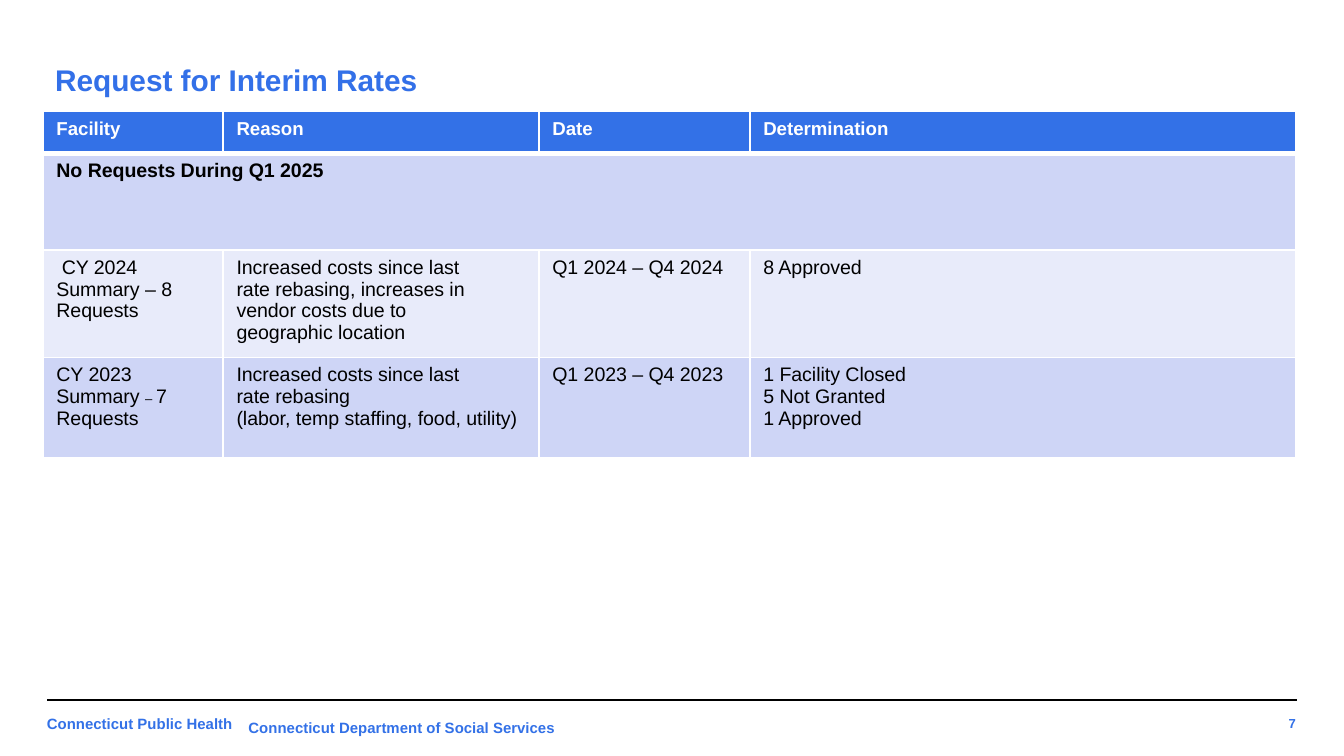
from lxml import etree
from pptx import Presentation
from pptx import util as u
from pptx.dml.color import RGBColor
from pptx.enum import shapes, text
from pptx.oxml.ns import qn

BLUE, WHITE, BLACK = "3371E7", "FFFFFF", "000000"
DARK_BAND, LIGHT_BAND = "CED5F6", "E8EBFA"
NBSP = chr(160)


def rgb(value):
    return RGBColor.from_string(value)


def style(r, size, color, bold=False):
    r.font.name = "Arial"
    r.font.size = u.Pt(size)
    r.font.bold = bold
    r.font.color.rgb = rgb(color)


def place(sp, box):
    sp.left, sp.top, sp.width, sp.height = [u.Inches(v) for v in box]


def inset(tf, x, y):
    tf.margin_left = tf.margin_right = u.Inches(x)
    tf.margin_top = tf.margin_bottom = u.Inches(y)


def add_title(s, box, words):
    sp = s.shapes.title
    place(sp, box)
    tf = sp.text_frame
    tf.text = words
    tf.vertical_anchor = text.MSO_ANCHOR.MIDDLE
    inset(tf, 0.1, 0.1)
    p = tf.paragraphs[0]
    p.alignment = text.PP_ALIGN.LEFT
    style(p.runs[0], 16, "3370E8", True)


def add_label(s, box, words, size=8, pad=0.1, align=text.PP_ALIGN.LEFT,
              anchor=text.MSO_ANCHOR.TOP):
    tf = s.shapes.add_textbox(*[u.Inches(v) for v in box]).text_frame
    tf.word_wrap = True
    tf.vertical_anchor = anchor
    inset(tf, 0.1, pad)
    tf.text = words
    p = tf.paragraphs[0]
    p.alignment = align
    style(p.runs[0], size, BLUE, True)


def add_footer(s, box):
    x, y, w, h = box
    rule = s.shapes.add_connector(
        shapes.MSO_CONNECTOR.STRAIGHT, u.Inches(x + w - 0.09), u.Inches(y),
        u.Inches(x + 0.1), u.Inches(y))
    rule.line.color.rgb = rgb(BLACK)
    rule.line.width = u.Pt(0.75)
    etree.SubElement(rule._element.spPr, qn("a:effectLst"))
    add_label(s, (x, y + 0.04, 3.28, 0.34), "Connecticut Public Health")
    add_label(s, (x + 1.5, y + 0.09, 2.65, 0.24),
              "Connecticut Department of Social Services", pad=0.05)
    add_label(s, (x + w - 0.6, y + 0.05, 0.6, 0.25), "7", size=7,
              align=text.PP_ALIGN.RIGHT, anchor=text.MSO_ANCHOR.MIDDLE)


def set_borders(cell, bottom):
    pr = cell._tc.get_or_add_tcPr()
    widths = {"a:lnL": 1, "a:lnR": 1, "a:lnT": 1, "a:lnB": bottom}
    for i, (tag, width) in enumerate(widths.items()):
        ln = etree.Element(qn(tag), w=str(u.Pt(width)))
        fill = etree.SubElement(ln, qn("a:solidFill"))
        etree.SubElement(fill, qn("a:srgbClr"), val=WHITE)
        pr.insert(i, ln)


def fill_cell(cell, words, fill, size, color, bold, bottom):
    cell.text_frame.text = words.replace("~", NBSP)
    for p in cell.text_frame.paragraphs:
        for r in p.runs:
            style(r, size, color, bold)
    cell.fill.solid()
    cell.fill.fore_color.rgb = rgb(fill)
    set_borders(cell, bottom)


def shrink_dash(p, size, dash_size):
    dash = "–" + NBSP
    before, after = p.text.split(dash)
    p.text = before
    p.add_run().text = dash
    p.add_run().text = after
    for r in p.runs:
        style(r, dash_size if r.text == dash else size, BLACK)


def add_requests_table(s, box, cols, heights, rows):
    table = s.shapes.add_table(
        len(rows), len(cols), *[u.Inches(v) for v in box]).table
    for col, width in zip(table.columns, cols):
        col.width = u.Inches(width)
    for row, height in zip(table.rows, heights):
        row.height = u.Inches(height)
    looks = [(BLUE, 10, WHITE, True, 3), (DARK_BAND, 10.5, BLACK, True, 1),
             (LIGHT_BAND, 10.5, BLACK, False, 1),
             (DARK_BAND, 10.5, BLACK, False, 1)]
    for i, (row, look) in enumerate(zip(rows, looks)):
        for j, words in enumerate(row):
            fill_cell(table.cell(i, j), words, *look)
    table.cell(1, 0).merge(table.cell(1, len(cols) - 1))
    shrink_dash(table.cell(3, 0).text_frame.paragraphs[0], 10.5, 7)


def main():
    prs = Presentation()
    prs.slide_width = u.Inches(10)
    prs.slide_height = prs.slide_width * 9 // 16
    s = prs.slides.add_slide(prs.slide_layouts[5])
    add_footer(s, (0.25, 5.21, 9.49, 0.38))
    add_title(s, (0.31, 0.43, 9.32, 0.33), "Request for Interim Rates")
    rows = [
        ["Facility~", "Reason", "Date", "Determination"],
        ["No Requests During Q1 2025", "", "", ""],
        [" CY 2024~ Summary – 8~ Requests~",
         "Increased costs since last rate~rebasing,~increases in "
         "vendor~costs due to geographic~location~",
         "Q1 2024 – Q4 2024", "8 Approved"],
        ["CY 2023~ Summary~–~7~ Requests~",
         "Increased costs since last rate~rebasing~\n"
         "(labor, temp staffing,~food, utility)",
         "Q1 2023 – Q4 2023",
         "1 Facility Closed\n5 Not Granted\n1 Approved"],
    ]
    add_requests_table(s, (0.32, 0.83, 9.32, 2.57), (1.34, 2.35, 1.57, 4.06),
                       (0.31, 0.72, 0.79, 0.75), rows)
    prs.save("out.pptx")


if __name__ == "__main__":
    main()
